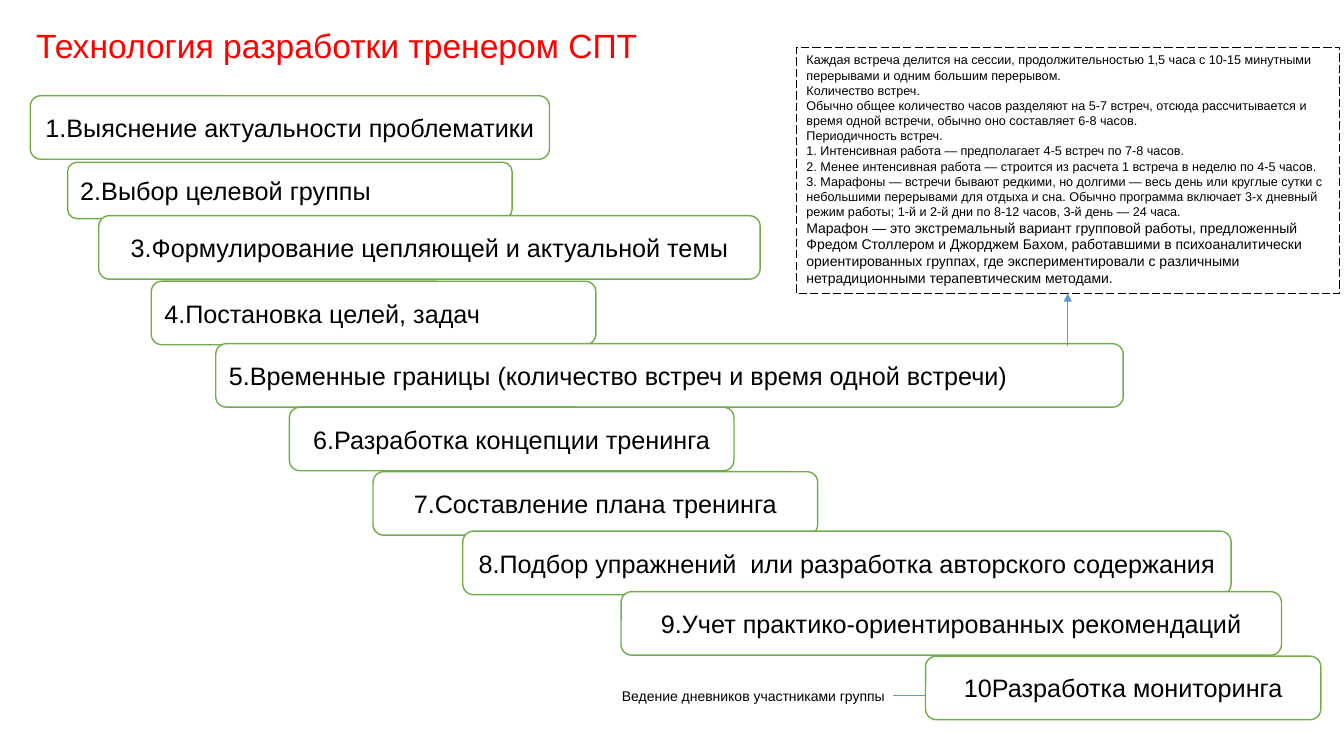
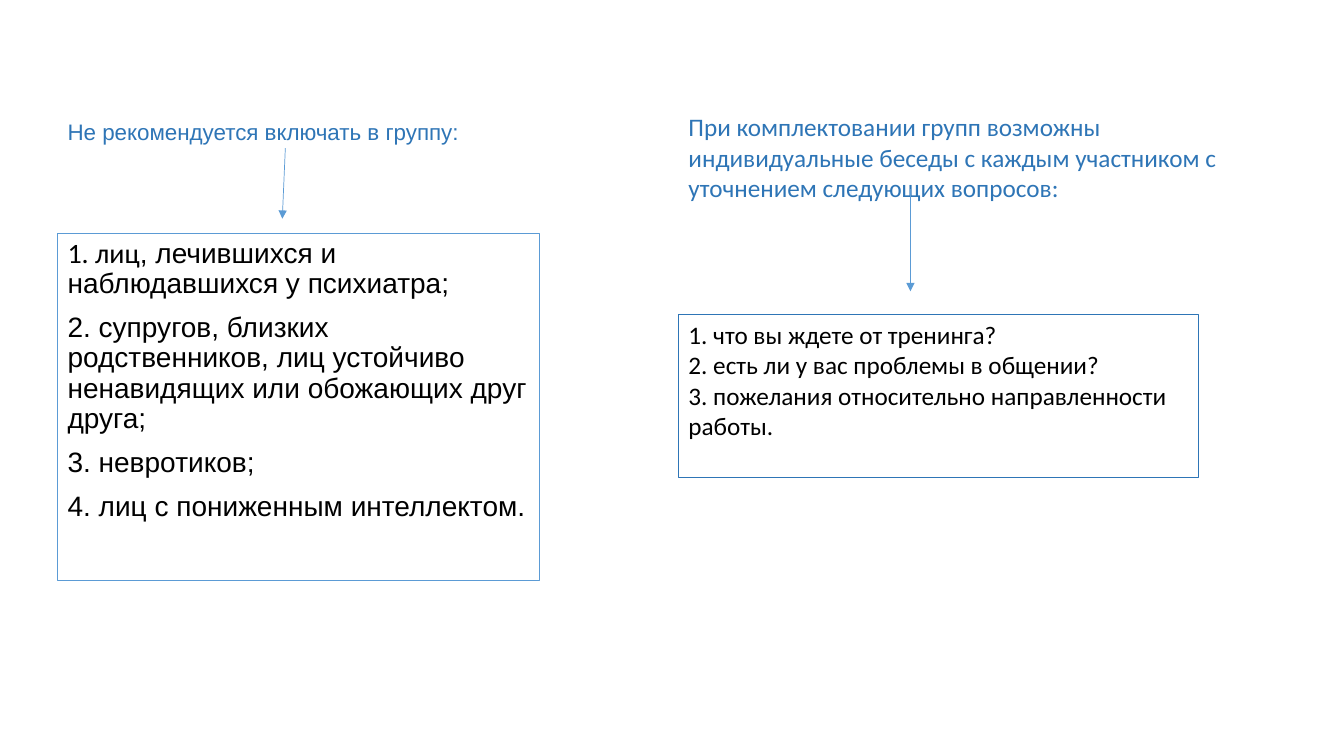
import pptx
import pptx.util
import pptx.dml.color
import pptx.enum.dml
import pptx.enum.shapes
import pptx.enum.text
import pptx.oxml
import pptx.oxml.ns

Inches = pptx.util.Inches
Pt = pptx.util.Pt
ALIGN = pptx.enum.text.PP_ALIGN
ANCHOR = pptx.enum.text.MSO_ANCHOR

COLORS = {
    "text": "000000",
    "title": "FF0000",
    "heading": "2E75B6",
    "step": "70AD47",
    "arrow": "5B9BD5",
    "white": "FFFFFF",
}
COLORS = {name: pptx.dml.color.RGBColor.from_string(value) for name, value in COLORS.items()}


def write_text(shape, paragraphs, size, color="text", font="Arial", anchor=ANCHOR.TOP, **para_format):
    frame = shape.text_frame
    frame.word_wrap = True
    frame.auto_size = pptx.enum.text.MSO_AUTO_SIZE.NONE
    frame.vertical_anchor = anchor
    settings = {"alignment": ALIGN.LEFT, "line_spacing": 1.0, "space_before": Pt(0), **para_format}
    for index, text in enumerate(paragraphs):
        para = frame.paragraphs[0] if index == 0 else frame.add_paragraph()
        for name, value in settings.items():
            setattr(para, name, Pt(0) if name == "space_before" and index == 0 else value)
        span = para.add_run()
        span.text = text
        for name, value in {"name": font, "size": Pt(size), "bold": False}.items():
            setattr(span.font, name, value)
        span.font.color.rgb = COLORS[color]


def draw_line(page, start, end, arrow=True):
    line = page.shapes.add_connector(
        pptx.enum.shapes.MSO_CONNECTOR.STRAIGHT, *[Inches(value) for value in (*start, *end)]
    )
    line.line.color.rgb = COLORS["arrow"]
    line.line.width = Pt(0.5)
    if arrow:
        outline = line.line._get_or_add_ln()
        pptx.oxml.ns.qn("a:tailEnd")
        outline.append(pptx.oxml.parse_xml(
            f'<a:tailEnd {pptx.oxml.ns.nsdecls("a")} type="triangle"/>'
        ))
    line._element.spPr.append(pptx.oxml.parse_xml(f'<a:effectLst {pptx.oxml.ns.nsdecls("a")}/>'))


deck = pptx.Presentation()
deck.slide_width = Inches(13.33)
deck.slide_height = Inches(7.5)

page = deck.slides.add_slide(deck.slide_layouts[5])
title = page.shapes.title
title.left, title.top, title.width, title.height = [Inches(value) for value in (0.25, 0.2, 6.18, 0.54)]
write_text(title, ["Технология разработки тренером СПТ"], 24, "title",
           anchor=ANCHOR.MIDDLE, alignment=ALIGN.CENTER, line_spacing=0.9)

steps = [
    ("1.Выяснение актуальности проблематики", 0.3, 0.95, 5.15, 0.63, ALIGN.CENTER),
    ("2.Выбор целевой группы", 0.67, 1.61, 4.41, 0.56, ALIGN.LEFT),
    ("3.Формулирование цепляющей и актуальной темы", 0.98, 2.14, 6.56, 0.63, ALIGN.CENTER),
    ("4.Постановка целей, задач", 1.5, 2.79, 4.41, 0.63, ALIGN.LEFT),
    ("5.Временные границы (количество встреч и время одной встречи)", 2.14, 3.41, 9, 0.63, ALIGN.LEFT),
    ("6.Разработка концепции тренинга", 2.87, 4.04, 4.41, 0.63, ALIGN.CENTER),
    ("7.Составление плана тренинга", 3.7, 4.68, 4.41, 0.63, ALIGN.CENTER),
    ("8.Подбор упражнений  или разработка авторского содержания", 4.59, 5.27, 7.62, 0.63, ALIGN.CENTER),
    ("9.Учет практико-ориентированных рекомендаций", 6.16, 5.87, 6.55, 0.63, ALIGN.CENTER),
    ("10Разработка мониторинга", 9.18, 6.51, 3.92, 0.63, ALIGN.CENTER),
]
for text, left, top, width, height, alignment in steps:
    box = page.shapes.add_shape(
        pptx.enum.shapes.MSO_SHAPE.ROUNDED_RECTANGLE,
        Inches(left), Inches(top), Inches(width), Inches(height),
    )
    box.shadow.inherit = False
    box.fill.solid()
    box.fill.fore_color.rgb = COLORS["white"]
    box.line.color.rgb = COLORS["step"]
    box.line.width = Pt(1)
    write_text(box, [text], 18, anchor=ANCHOR.MIDDLE, alignment=alignment)

sessions = page.shapes.add_textbox(Inches(7.9), Inches(0.47), Inches(5.39), Inches(2.44))
sessions.line.color.rgb = COLORS["text"]
sessions.line.width = Pt(0.75)
sessions.line.dash_style = pptx.enum.dml.MSO_LINE.LONG_DASH
write_text(sessions, [
    "Каждая встреча делится на сессии, продолжительностью 1,5 часа с 10-15 минутными перерывами и одним большим перерывом.",
    "Количество встреч.",
    "Обычно общее количество часов разделяют на 5-7 встреч, отсюда рассчитывается и время одной встречи, обычно оно составляет 6-8 часов.",
    "Периодичность встреч.",
    "1. Интенсивная работа — предполагает 4-5 встреч по 7-8 часов.",
    "2. Менее интенсивная работа — строится из расчета 1 встреча в неделю по 4-5 часов.",
    "3. Марафоны — встречи бывают редкими, но долгими — весь день или круглые сутки с небольшими перерывами для отдыха и сна. Обычно программа включает 3-х дневный режим работы; 1-й и 2-й дни по 8-12 часов, 3-й день — 24 часа.",
    "Марафон — это экстремальный вариант групповой работы, предложенный Фредом Столлером и Джорджем Бахом, работавшими в психоаналитически ориентированных группах, где экспериментировали с различными нетрадиционными терапевтическим методами.",
], 9)
sessions.text_frame.paragraphs[-1].runs[0].font.size = Pt(10)
draw_line(page, (10.59, 3.43), (10.59, 2.91))

diaries = page.shapes.add_textbox(Inches(6.07), Inches(6.77), Inches(2.96), Inches(0.27))
write_text(diaries, ["Ведение дневников участниками группы"], 10)
draw_line(page, (9.18, 6.9), (8.86, 6.9), arrow=False)

page = deck.slides.add_slide(deck.slide_layouts[1])
title = page.shapes.title
title.left, title.top, title.width, title.height = [Inches(value) for value in (0.57, 1.06, 4.78, 0.53)]
write_text(title, ["Не рекомендуется включать в группу:"], 16, "heading",
           anchor=ANCHOR.MIDDLE, line_spacing=0.9)

excluded = page.placeholders[1]
excluded.left, excluded.top, excluded.width, excluded.height = [
    Inches(value) for value in (0.57, 2.32, 4.78, 3.44)
]
excluded.line.color.rgb = COLORS["arrow"]
excluded.line.width = Pt(0.75)
write_text(excluded, [
    "1. лиц",
    "2. супругов, близких родственников, лиц устойчиво ненавидящих или обожающих друг друга;",
    "3. невротиков;",
    "4. лиц с пониженным интеллектом.",
], 20, line_spacing=0.9, space_before=Pt(10))
for para in excluded.text_frame.paragraphs:
    properties = para._p.get_or_add_pPr()
    properties.set("marL", "0")
    properties.set("indent", "0")
    properties.append(pptx.oxml.parse_xml(f'<a:buNone {pptx.oxml.ns.nsdecls("a")}/>'))
first = excluded.text_frame.paragraphs[0]
first.runs[0].font.name = "Calibri"
span = first.add_run()
span.text = ", лечившихся и наблюдавшихся у психиатра;"
for name, value in {"name": "Arial", "size": Pt(20)}.items():
    setattr(span.font, name, value)
span.font.color.rgb = COLORS["text"]

interview = page.shapes.add_textbox(Inches(6.73), Inches(1.06), Inches(6.07), Inches(1.31))
write_text(interview, [
    "При комплектовании групп возможны индивидуальные беседы с каждым участником с уточнением следующих вопросов:",
], 18, "heading", "Calibri")

questions = page.shapes.add_textbox(Inches(6.73), Inches(3.12), Inches(5.16), Inches(1.62))
questions.line.color.rgb = COLORS["heading"]
questions.line.width = Pt(0.75)
write_text(questions, [
    "1. что вы ждете от тренинга?",
    "2. есть ли у вас проблемы в общении?",
    "3. пожелания относительно направленности работы.",
], 18, font="Calibri")

draw_line(page, (9.03, 1.88), (9.03, 2.89))
draw_line(page, (2.83, 1.47), (2.8, 2.17))

deck.save("out.pptx")
